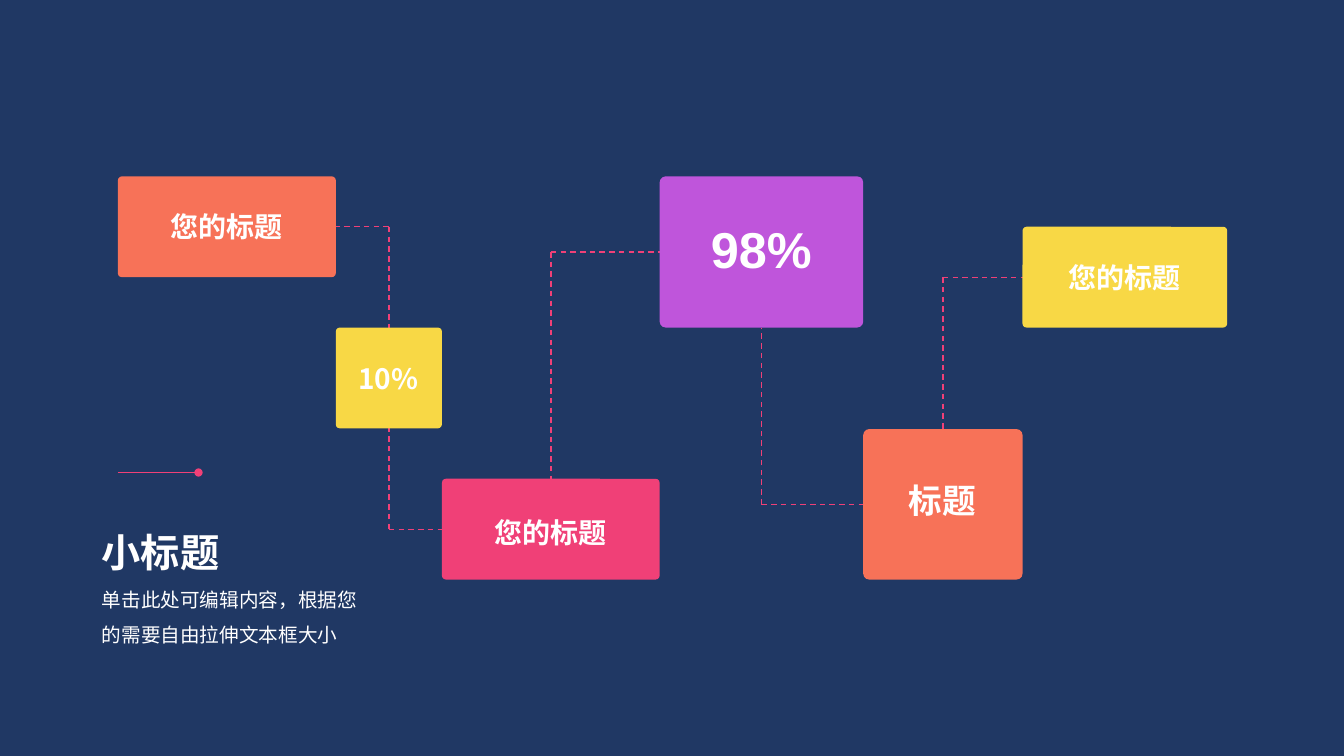
from lxml import etree
from pptx import Presentation
from pptx.dml.color import RGBColor
from pptx.enum.dml import MSO_LINE
from pptx.enum.shapes import MSO_CONNECTOR, MSO_SHAPE
from pptx.enum.text import MSO_ANCHOR, MSO_AUTO_SIZE, PP_ALIGN
from pptx.oxml.ns import qn
from pptx.util import Pt

STRAIGHT = MSO_CONNECTOR.STRAIGHT
ROUNDED = MSO_SHAPE.ROUNDED_RECTANGLE
DASH = MSO_LINE.DASH
MIDDLE = MSO_ANCHOR.MIDDLE
GROW = MSO_AUTO_SIZE.SHAPE_TO_FIT_TEXT
CENTER, LEFT = PP_ALIGN.CENTER, PP_ALIGN.LEFT
TOP, LEFT_SIDE, BOTTOM, RIGHT_SIDE = range(4)

NAVY, WHITE = "203864", "FFFFFF"
CORAL, YELLOW, PINK, PURPLE = "F77258", "F8D845", "F04077", "BF55DB"
LATIN, CJK = "Arial", "Noto Sans CJK SC"

CHAIN_LEFT = 84.2
# Each box starts where the one before it ends: top, width, height, fill
CHAIN = [
    (126, 155.7, 72, CORAL),
    (234, 75.8, 72, YELLOW),
    (342, 155.5, 72, PINK),
    (126, 145.4, 108, PURPLE),
    (306.5, 113.8, 107.5, CORAL),
    (162, 146.2, 72, YELLOW),
]
# Box left from its top or bottom, that side, box met from the side, that side
LINKS = [
    (1, TOP, 0, RIGHT_SIDE),
    (1, BOTTOM, 2, LEFT_SIDE),
    (2, TOP, 3, LEFT_SIDE),
    (3, BOTTOM, 4, LEFT_SIDE),
    (4, TOP, 5, LEFT_SIDE),
]
# Left, top, width, height, text, size, font
LABELS = [
    (245.5, 258, 63.5, 24.5, "10%", 20, CJK),
    (339, 368, 109, 24.5, "您的标题", 20, CJK),
    (489.5, 155.5, 108.5, 44, "98%", 36, LATIN),
    (618.5, 343, 109, 29, "标题", 24, LATIN),
    (746, 186, 114.5, 24.5, "您的标题", 20, CJK),
]


def color(hex_code):
    return RGBColor.from_string(hex_code)


def write(paragraph, text, size, font, bold=True, align=CENTER, spacing=None):
    paragraph.alignment = align
    if spacing:
        paragraph.line_spacing = spacing
    run = paragraph.add_run()
    run.text = text
    for key, value in {"size": Pt(size), "name": font, "bold": bold}.items():
        setattr(run.font, key, value)
    run.font.color.rgb = color(WHITE)
    east_asian = etree.SubElement(run.font._element, qn("a:ea"))
    east_asian.set("typeface", CJK)


def add_box(slide, left, top, width, height, fill):
    box = slide.shapes.add_shape(ROUNDED, Pt(left), Pt(top), Pt(width), Pt(height))
    box.adjustments[0] = 0.04
    box.shadow.inherit = False
    box.fill.solid()
    box.fill.fore_color.rgb = color(fill)
    box.line.fill.background()
    return box


def add_line(slide, start, end, width):
    line = slide.shapes.add_connector(STRAIGHT, *start, *end)
    line.line.color.rgb = color(PINK)
    line.line.width = Pt(width)
    etree.SubElement(line._element.spPr, qn("a:effectLst"))
    return line


def add_link(slide, upright_box, upright_side, level_box, level_side):
    """Two dashed lines that meet at a right angle."""
    corner = (upright_box.left + upright_box.width // 2,
              level_box.top + level_box.height // 2)
    for box, side in ((upright_box, upright_side), (level_box, level_side)):
        arm = add_line(slide, corner, corner, 1)
        arm.end_connect(box, side)
        arm.line.dash_style = DASH
        # Links lie behind the boxes
        slide.shapes._spTree.insert(2, arm._element)


def add_text_frame(slide, left, top, width, height):
    frame = slide.shapes.add_textbox(Pt(left), Pt(top), Pt(width), Pt(height)).text_frame
    layout = {"margin_left": 0, "margin_top": 0, "margin_right": 0,
              "margin_bottom": 0, "word_wrap": True, "auto_size": GROW}
    for key, value in layout.items():
        setattr(frame, key, value)
    return frame


def main():
    deck = Presentation()
    deck.slide_width, deck.slide_height = Pt(960), Pt(540)
    slide = deck.slides.add_slide(deck.slide_layouts[6])
    slide.background.fill.solid()
    slide.background.fill.fore_color.rgb = color(NAVY)

    # Chain of boxes
    boxes = []
    left = CHAIN_LEFT
    for top, width, height, fill in CHAIN:
        boxes.append(add_box(slide, left, top, width, height, fill))
        left += width
    first_frame = boxes[0].text_frame
    first_frame.vertical_anchor = MIDDLE
    write(first_frame.paragraphs[0], "您的标题", 20, LATIN)

    # Dashed links
    for upright, upright_side, level, level_side in LINKS:
        add_link(slide, boxes[upright], upright_side, boxes[level], level_side)

    # Labels over the boxes
    for *place, text, size, font in LABELS:
        write(add_text_frame(slide, *place).paragraphs[0], text, size, font)

    # Accent line with a dot at its end
    accent = add_line(slide, (Pt(84.2), Pt(337.5)), (Pt(141.8), Pt(337.5)), 0.25)
    etree.SubElement(accent.line._get_or_add_ln(), qn("a:tailEnd")).set("type", "oval")

    # Subtitle and description
    summary = add_text_frame(slide, 72.7, 381, 195, 81.4)
    write(summary.paragraphs[0], "小标题", 28, CJK, align=LEFT, spacing=0.9)
    write(summary.add_paragraph(), "单击此处可编辑内容，根据您的需要自由拉伸文本框大小",
          14, CJK, bold=False, align=LEFT, spacing=1.5)

    deck.save("out.pptx")


if __name__ == "__main__":
    main()
